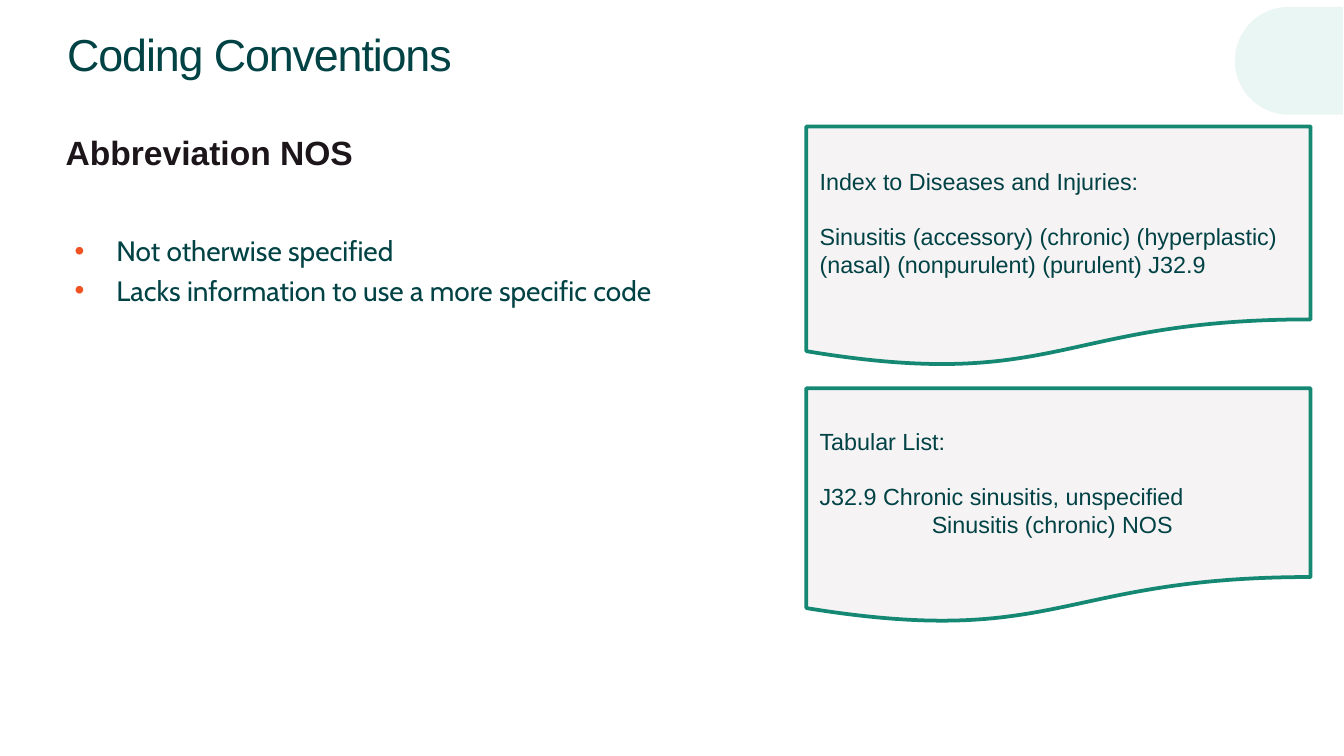
from dataclasses import dataclass

from lxml.etree import SubElement
from pptx import Presentation
from pptx.dml.color import RGBColor
from pptx.enum.shapes import MSO_SHAPE as Shape
from pptx.enum.text import MSO_ANCHOR as Anchor, MSO_AUTO_SIZE as AutoSize, PP_ALIGN as Align
from pptx.oxml.ns import qn
from pptx.util import Cm, Pt


@dataclass(frozen=True)
class Theme:
    ink: str = "014245"
    heading_ink: str = "1C151A"
    bullet: str = "EF5321"
    accent: str = "158873"
    panel: str = "F6F3F5"
    tint: str = "EAF6F3"
    font: str = "Arial"
    list_font: str = "Cabin"
    title_size: float = 24
    heading_size: float = 18
    list_size: float = 15
    panel_size: float = 12.5


THEME = Theme()


def rgb(value):
    return RGBColor.from_string(value)


def place(shape, box):
    shape.left, shape.top, shape.width, shape.height = (Cm(length) for length in box)


def set_bullet(properties, color):
    """Give the paragraph a round bullet, or none when color is None."""
    if color is None:
        SubElement(properties, qn("a:buNone"))
        return
    bullet_color = SubElement(properties, qn("a:buClr"))
    SubElement(bullet_color, qn("a:srgbClr"), val=color)
    SubElement(properties, qn("a:buFont"), typeface=THEME.font)
    SubElement(properties, qn("a:buChar"), char="•")


def write(frame, text, *, size, font=THEME.font, color=THEME.ink, bold=False,
          space_before=0, left=0, hanging=0, bullet=None, tracking=None):
    """Write into the empty first paragraph, or add one after it."""
    first = frame.paragraphs[0]
    paragraph = frame.add_paragraph() if first.runs else first
    paragraph.alignment = Align.LEFT
    paragraph.space_before = Pt(space_before)
    properties = paragraph._p.get_or_add_pPr()
    properties.set("marL", str(Cm(left)))
    properties.set("indent", str(Cm(-hanging)))
    set_bullet(properties, bullet)
    run = paragraph.add_run()
    run.text = text
    run.font.name, run.font.size, run.font.bold = font, Pt(size), bold
    run.font.color.rgb = rgb(color)
    if tracking is not None:
        run.font._element.set("spc", str(round(tracking * 100)))


def prepare_placeholder(placeholder, box, anchor=Anchor.TOP, left_inset=0.2):
    place(placeholder, box)
    frame = placeholder.text_frame
    frame.word_wrap = True
    frame.auto_size = AutoSize.NONE
    frame.vertical_anchor = anchor
    frame.margin_left, frame.margin_right = Cm(left_inset), Cm(0.2)
    frame.margin_top = frame.margin_bottom = Cm(0.1)
    return frame


def add_panel_shape(slide, kind, box, fill):
    shape = slide.shapes.add_shape(kind, *(Cm(length) for length in box))
    shape.shadow.inherit = False
    shape.fill.solid()
    shape.fill.fore_color.rgb = rgb(fill)
    return shape


def add_corner_tab(slide, box):
    tab = add_panel_shape(slide, Shape.FLOWCHART_DELAY, box, THEME.tint)
    tab.line.fill.background()
    tab._element.spPr.find(qn("a:xfrm")).set("flipH", "1")


def fill_title(placeholder, box, text):
    frame = prepare_placeholder(placeholder, box, Anchor.MIDDLE, left_inset=0.43)
    write(frame, text, size=THEME.title_size, tracking=-0.6)


def fill_heading(placeholder, box, text):
    frame = prepare_placeholder(placeholder, box)
    write(frame, text, size=THEME.heading_size, color=THEME.heading_ink, bold=True, left=0.2)


def fill_bullets(placeholder, box, items):
    frame = prepare_placeholder(placeholder, box)
    for number, item in enumerate(items):
        write(frame, item, size=THEME.list_size, font=THEME.list_font,
              space_before=3 if number else 0, left=1.57, hanging=0.79, bullet=THEME.bullet)


def add_document(slide, box, heading, entry, subentry=None):
    document = add_panel_shape(slide, Shape.FLOWCHART_DOCUMENT, box, THEME.panel)
    document.line.color.rgb = rgb(THEME.accent)
    document.line.width = Pt(2)
    frame = document.text_frame
    frame.word_wrap = True
    frame.vertical_anchor = Anchor.MIDDLE
    write(frame, heading, size=THEME.panel_size)
    write(frame, entry, size=THEME.panel_size, space_before=14.5)
    if subentry:
        write(frame, subentry, size=THEME.panel_size, left=2.12)


def main():
    presentation = Presentation()
    presentation.slide_width, presentation.slide_height = Cm(25.4), Cm(14.29)
    slide = presentation.slides.add_slide(presentation.slide_layouts[3])
    title, heading, bullets = slide.placeholders

    add_corner_tab(slide, (23.34, 0.13, 2.04, 2.04))
    fill_title(title, (0.84, 0.28, 21.92, 1.47), "Coding Conventions")
    fill_heading(heading, (0.84, 2.39, 23.65, 11.13), "Abbreviation NOS")
    fill_bullets(bullets, (0.43, 4.32, 12.9, 7.95),
                 ["Not otherwise specified", "Lacks information to use a more specific code"])
    add_document(slide, (15.24, 7.34, 9.53, 4.45), "Tabular List:",
                 "J32.9 Chronic sinusitis, unspecified", "Sinusitis (chronic) NOS")
    add_document(slide, (15.24, 2.39, 9.53, 4.55), "Index to Diseases and Injuries:",
                 "Sinusitis (accessory) (chronic) (hyperplastic) "
                 "(nasal) (nonpurulent) (purulent) J32.9")
    presentation.save("out.pptx")


if __name__ == "__main__":
    main()
